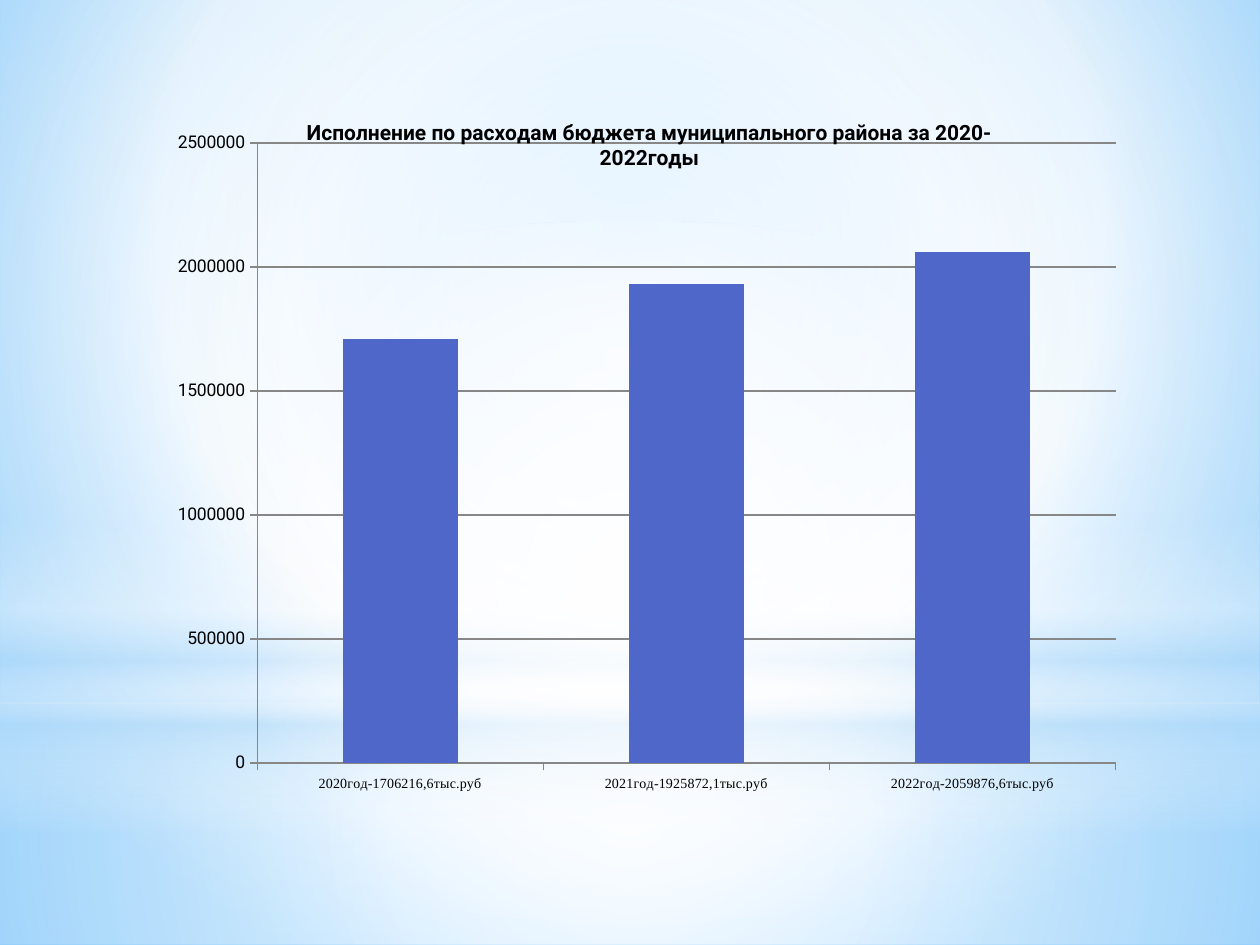
"""Builds a slide with a column chart of district budget spending on a soft blue backdrop."""
from lxml.etree import SubElement
from pptx import Presentation
from pptx.chart.data import CategoryChartData
from pptx.dml.color import RGBColor
from pptx.enum.chart import XL_CHART_TYPE as ChartType, XL_TICK_MARK as TickMark
from pptx.enum.shapes import MSO_SHAPE as Shape
from pptx.oxml import parse_xml
from pptx.oxml.ns import nsdecls, qn
from pptx.util import Inches, Pt

TITLE = "Исполнение по расходам бюджета муниципального района за 2020-2022годы"
SPENDING = [
    ("2020год-1706216,6тыс.руб", 1710000),
    ("2021год-1925872,1тыс.руб", 1930000),
    ("2022год-2059876,6тыс.руб", 2060000),
]
BLACK = RGBColor(0x00, 0x00, 0x00)
GRAY = RGBColor(0x87, 0x87, 0x87)
INDIGO = RGBColor(0x4E, 0x67, 0xC8)
WHITE = RGBColor(0xFF, 0xFF, 0xFF)
PALE = RGBColor(0xB4, 0xDC, 0xFA)
SKY = RGBColor(0x9E, 0xD5, 0xFF)
AZURE = RGBColor(0x5B, 0xB9, 0xFF)

CENTER = (50, 50, 50, 50)
SKY_STOPS = [(0, SKY, 100), (60, WHITE, 100), (100, AZURE, 100)]
SKY_FOCUS = (20, 10, 20, 60)
LAYERS = [
    (Shape.RECTANGLE, (0, 5.58, 10, 1.92), CENTER,
     [(0, WHITE, 91), (37, WHITE, 76), (100, PALE, 79)]),
    (Shape.RECTANGLE, (0, 0, 10, 5.58), CENTER,
     [(0, WHITE, 89), (48, WHITE, 62), (100, PALE, 79)]),
    (Shape.RECTANGLE, (0, 4.12, 10, 2.5), None,
     [(0, WHITE, 0), (29, WHITE, 30), (45, PALE, 40),
      (55, WHITE, 26), (65, PALE, 60), (100, WHITE, 0)]),
    (Shape.OVAL, (0, 1.75, 10, 5.58), CENTER,
     [(0, WHITE, 100), (56, WHITE, 0)]),
]
CHART_BOX = (1.25, 0.68, 7.69, 5.75)
PLOT_LAYOUT = {"layoutTarget": "inner", "xMode": "edge", "yMode": "edge",
               "x": 0.103, "y": 0.079, "w": 0.886, "h": 0.856}
TITLE_LAYOUT = {"xMode": "edge", "yMode": "edge", "x": 0.15, "y": 0.04}


def set_gradient(fill, owner, stops, focus):
    """Fill the owner element with a radial gradient, or a vertical one without focus."""
    fill.solid()
    marks = "".join(
        f'<a:gs pos="{pos * 1000}"><a:srgbClr val="{color}">'
        f'<a:alpha val="{alpha * 1000}"/></a:srgbClr></a:gs>'
        for pos, color, alpha in stops)
    if focus:
        sides = " ".join(f'{side}="{value * 1000}"' for side, value in zip("ltrb", focus))
        direction = f'<a:path path="circle"><a:fillToRect {sides}/></a:path>'
    else:
        direction = '<a:lin ang="5400000" scaled="0"/>'
    gradient = parse_xml(f'<a:gradFill {nsdecls("a")} rotWithShape="1">'
                         f'<a:gsLst>{marks}</a:gsLst>{direction}</a:gradFill>')
    solid = owner.find(".//" + qn("a:solidFill"))
    solid.getparent().replace(solid, gradient)


def set_layout(parent, previous, values):
    """Place a chart part by fractions of the chart area."""
    for old in parent.findall(qn("c:layout")):
        parent.remove(old)
    layout = parse_xml(f'<c:layout {nsdecls("c")}/>')
    manual = SubElement(layout, qn("c:manualLayout"))
    for name, value in values.items():
        SubElement(manual, qn(f"c:{name}")).set("val", str(value))
    if previous is None:
        parent.insert(0, layout)
    else:
        previous.addnext(layout)


def set_font(font, size, name="Roboto", bold=False):
    font.size, font.name, font.bold = Pt(size), name, bold
    font.color.rgb = BLACK


def add_backdrop(page):
    set_gradient(page.background.fill, page.element.cSld, SKY_STOPS, SKY_FOCUS)
    for kind, place, focus, stops in LAYERS:
        layer = page.shapes.add_shape(kind, *map(Inches, place))
        layer.shadow.inherit = False
        layer.line.fill.background()
        set_gradient(layer.fill, layer.element.spPr, stops, focus)


def add_spending_chart(page):
    data = CategoryChartData()
    data.categories = [label for label, _ in SPENDING]
    data.add_series("Series 1", [amount for _, amount in SPENDING])
    chart = page.shapes.add_chart(
        ChartType.COLUMN_CLUSTERED, *map(Inches, CHART_BOX), data).chart
    set_font(chart.font, 10)
    chart.has_legend = False

    chart.has_title = True
    title = chart.chart_title
    title.text_frame.text = TITLE
    set_font(title.text_frame.paragraphs[0].runs[0].font, 12, bold=True)
    title.include_in_layout = True
    heading = title.element if hasattr(title, "element") else title._element
    set_layout(heading, heading.find(qn("c:tx")), TITLE_LAYOUT)
    set_layout(chart.element.find(".//" + qn("c:plotArea")) if hasattr(chart, "element")
               else heading.getparent().find(qn("c:plotArea")), None, PLOT_LAYOUT)

    plot = chart.plots[0]
    plot.gap_width = 150
    plot.vary_by_categories = False
    columns = plot.series[0].format.fill
    columns.solid()
    columns.fore_color.rgb = INDIGO

    amounts, years = chart.value_axis, chart.category_axis
    amounts.minimum_scale, amounts.maximum_scale, amounts.major_unit = 0, 2500000, 500000
    amounts.has_major_gridlines = True
    for axis in (amounts, years):
        axis.major_tick_mark = TickMark.OUTSIDE
        axis.minor_tick_mark = TickMark.NONE
        axis.format.line.color.rgb = GRAY
        axis.format.line.width = Pt(0.75)
    amounts.major_gridlines.format.line.color.rgb = GRAY
    amounts.major_gridlines.format.line.width = Pt(0.75)
    set_font(amounts.tick_labels.font, 10)
    set_font(years.tick_labels.font, 8, "Times New Roman")


def main():
    deck = Presentation()
    deck.slide_width, deck.slide_height = Inches(10), Inches(7.5)
    page = deck.slides.add_slide(deck.slide_layouts[6])
    add_backdrop(page)
    add_spending_chart(page)
    deck.save("out.pptx")


if __name__ == "__main__":
    main()
